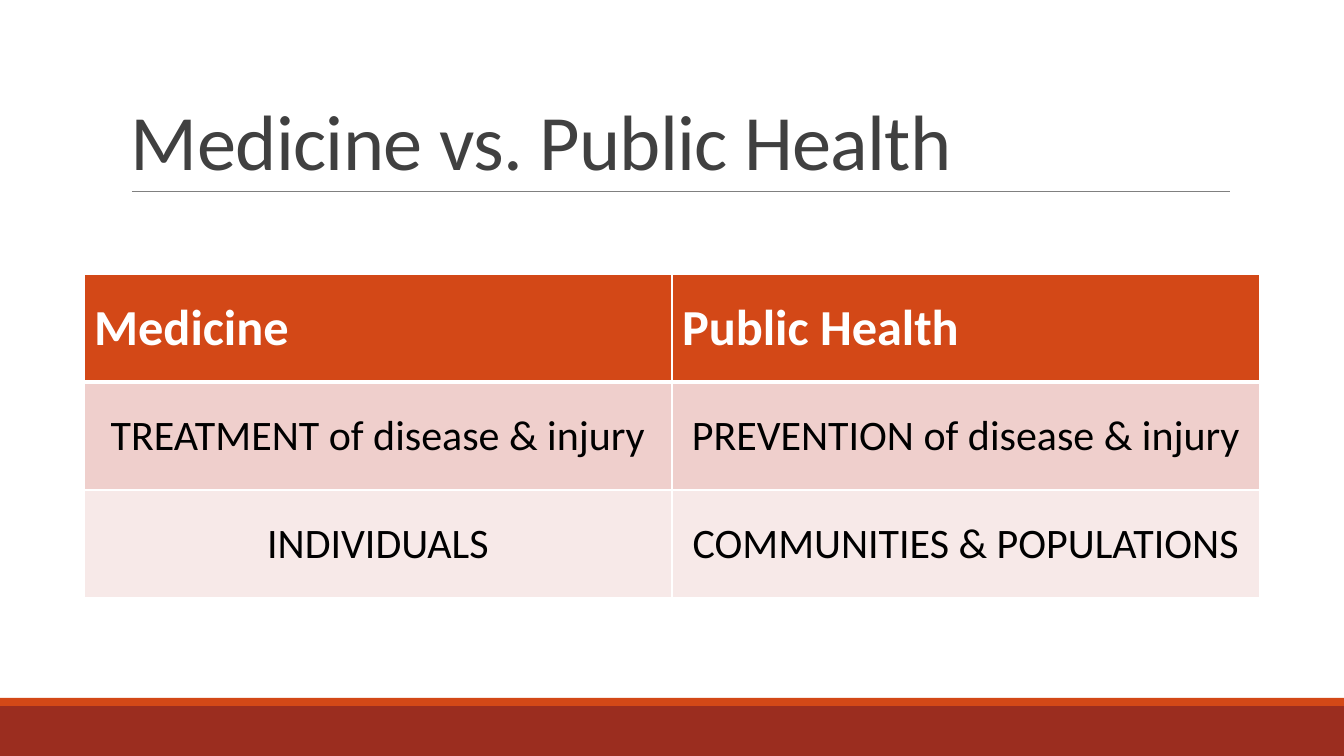
from pptx import Presentation
from pptx.dml.color import RGBColor
from pptx.enum.shapes import MSO_CONNECTOR, MSO_SHAPE
from pptx.enum.text import MSO_ANCHOR, PP_ALIGN
from pptx.oxml.ns import qn
from pptx.util import Emu, Pt
from lxml.etree import SubElement


def px(n):
    """Turn pixels into EMU; the slide is 1344 px wide."""
    return Emu(round(n * 12192000 / 1344))


def color(hex_string):
    return RGBColor.from_string(hex_string)


prs = Presentation()
prs.slide_width, prs.slide_height = px(1344), px(756)
s = prs.slides.add_slide(prs.slide_layouts[6])

# Footer bands
for top, height, fill in [(706, 50, "9B2D1F"), (698, 8, "D34817")]:
    band = s.shapes.add_shape(MSO_SHAPE.RECTANGLE, 0, px(top), px(1344), px(height))
    band.shadow.inherit = False
    band.fill.solid()
    band.fill.fore_color.rgb = color(fill)
    band.line.fill.background()

# Rule under the title
rule = s.shapes.add_connector(MSO_CONNECTOR.STRAIGHT, px(132), px(191), px(1230), px(191))
rule.line.color.rgb = color("808080")
rule.line.width = Pt(0.5)
SubElement(rule._element.spPr, qn("a:effectLst"))

# Title
title = s.shapes.add_textbox(px(121), px(31), px(1109), px(160))
tf = title.text_frame
tf.word_wrap = True
tf.vertical_anchor = MSO_ANCHOR.BOTTOM
p = tf.paragraphs[0]
p.line_spacing = 0.85
r = p.add_run()
r.text = "Medicine vs. Public Health"
r.font.name = "Calibri"
r.font.size = Pt(56)
r.font.color.rgb = color("404040")
r.font._element.set("spc", "-50")

# Comparison table: texts, fill, text colour, size, bold, alignment
rows = [
    (["Medicine", "Public Health"], "D34817", "FFFFFF", 36, True, PP_ALIGN.LEFT),
    (["TREATMENT of disease & injury", "PREVENTION of disease & injury"],
     "EFCFCC", "000000", 30, False, PP_ALIGN.CENTER),
    (["INDIVIDUALS", "COMMUNITIES & POPULATIONS"],
     "F7E9E8", "000000", 30, False, PP_ALIGN.CENTER),
]
table = s.shapes.add_table(3, 2, px(84), px(274), px(1176), px(324)).table
for i, (texts, fill, text_color, size, bold, align) in enumerate(rows):
    for j, text in enumerate(texts):
        cell = table.cell(i, j)
        cell.vertical_anchor = MSO_ANCHOR.MIDDLE
        p = cell.text_frame.paragraphs[0]
        p.alignment = align
        r = p.add_run()
        r.text = text
        r.font.name = "Calibri"
        r.font.size = Pt(size)
        r.font.bold = bold
        r.font.color.rgb = color(text_color)

        # Borders come before the fill in the cell properties
        tcPr = cell._tc.get_or_add_tcPr()
        for side in ("lnL", "lnR", "lnT", "lnB"):
            under_header = (i, side) in [(0, "lnB"), (1, "lnT")]
            ln = SubElement(tcPr, qn(f"a:{side}"), w=str(Pt(3 if under_header else 1)))
            SubElement(SubElement(ln, qn("a:solidFill")), qn("a:srgbClr"), val="FFFFFF")
        cell.fill.solid()
        cell.fill.fore_color.rgb = color(fill)

prs.save("out.pptx")
